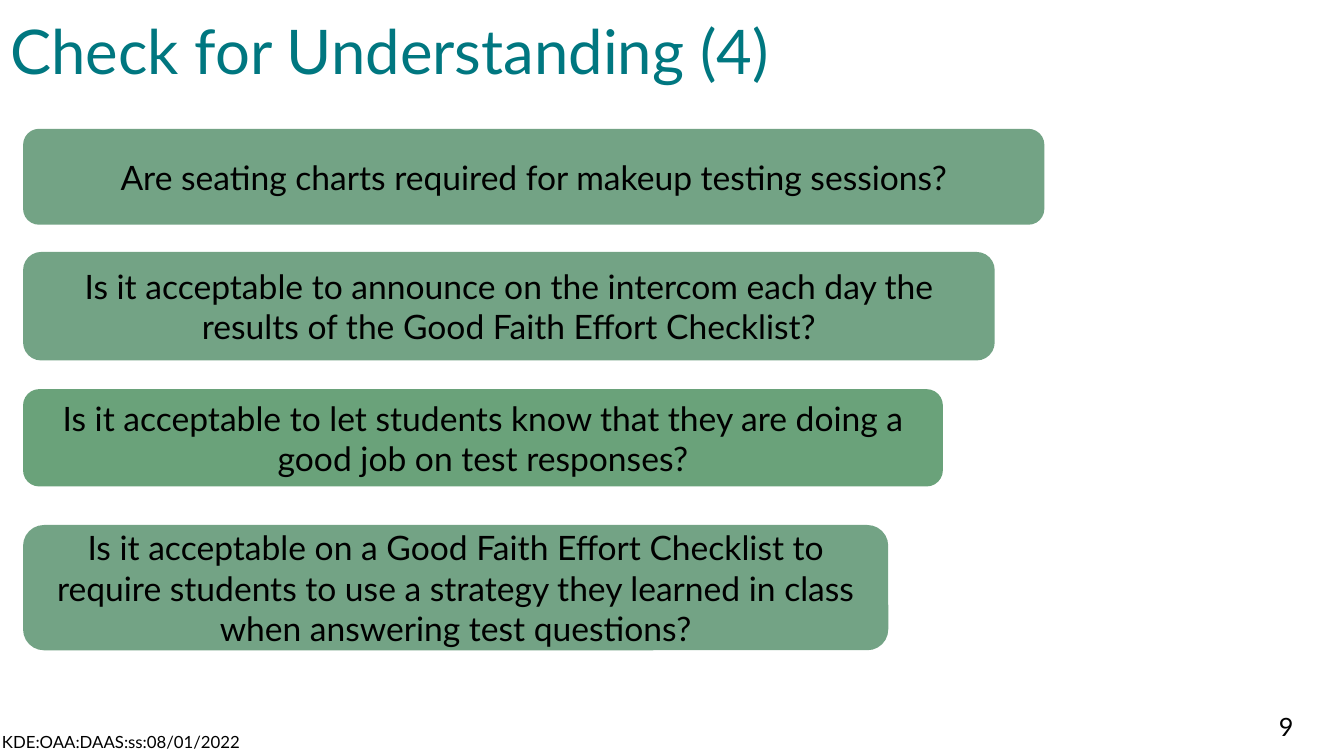
"""Build the "Check for Understanding (4)" slide with four question bars."""
import pptx
import pptx.util
import pptx.dml.color
import pptx.enum.shapes
import pptx.enum.text

Pt = pptx.util.Pt
RGBColor = pptx.dml.color.RGBColor
ALIGN = pptx.enum.text.PP_ALIGN
ANCHOR = pptx.enum.text.MSO_ANCHOR

TEAL = RGBColor(0x00, 0x77, 0x80)
SAGE = RGBColor(0x73, 0xA3, 0x85)
GREEN = RGBColor(0x6A, 0xA2, 0x7A)
BLACK = RGBColor(0x00, 0x00, 0x00)


def write(sp, text, size, color, align, anchor):
    tf = sp.text_frame
    tf.word_wrap = True
    tf.auto_size = pptx.enum.text.MSO_AUTO_SIZE.NONE
    tf.vertical_anchor = anchor
    p = tf.paragraphs[0]
    p.alignment = align
    r = p.add_run()
    r.text = text
    r.font.name = "Lato"
    r.font.size = Pt(size)
    r.font.color.rgb = color
    return p


prs = pptx.Presentation()
prs.slide_width = Pt(960)
prs.slide_height = Pt(540)
s = prs.slides.add_slide(prs.slide_layouts[5])

title = s.shapes.title
title.left, title.top, title.width, title.height = Pt(0), Pt(0), Pt(710.5), Pt(77.5)
p = write(title, "Check for Understanding (4)", 44, TEAL, ALIGN.LEFT, ANCHOR.MIDDLE)
p.line_spacing = 0.9

questions = [
    (92, 729.5, 68.5, SAGE, "Are seating charts required for makeup testing sessions?"),
    (180, 694, 77.5, SAGE, "Is it acceptable to announce on the intercom each day the "
     "results of the Good Faith Effort Checklist?"),
    (278, 657, 69.5, GREEN, "Is it acceptable to let students know that they are doing a "
     "good job on test responses?"),
    (375, 618, 89.5, SAGE, "Is it acceptable on a Good Faith Effort Checklist to require "
     "students to use a strategy they learned in class when answering test questions?"),
]
for top, width, height, color, text in questions:
    sp = s.shapes.add_shape(pptx.enum.shapes.MSO_SHAPE.ROUNDED_RECTANGLE,
                            Pt(16.5), Pt(top), Pt(width), Pt(height))
    sp.shadow.inherit = False
    sp.fill.solid()
    sp.fill.fore_color.rgb = color
    sp.line.fill.background()
    write(sp, text, 24, BLACK, ALIGN.CENTER, ANCHOR.MIDDLE)

footer = s.shapes.add_textbox(Pt(-25), Pt(519), Pt(223), Pt(21))
write(footer, "KDE:OAA:DAAS:ss:08/01/2022", 12, BLACK, ALIGN.CENTER, ANCHOR.MIDDLE)

number = s.shapes.add_textbox(Pt(906.5), Pt(504.5), Pt(53.5), Pt(29))
write(number, "9", 18, BLACK, ALIGN.LEFT, ANCHOR.TOP)

prs.save("out.pptx")
